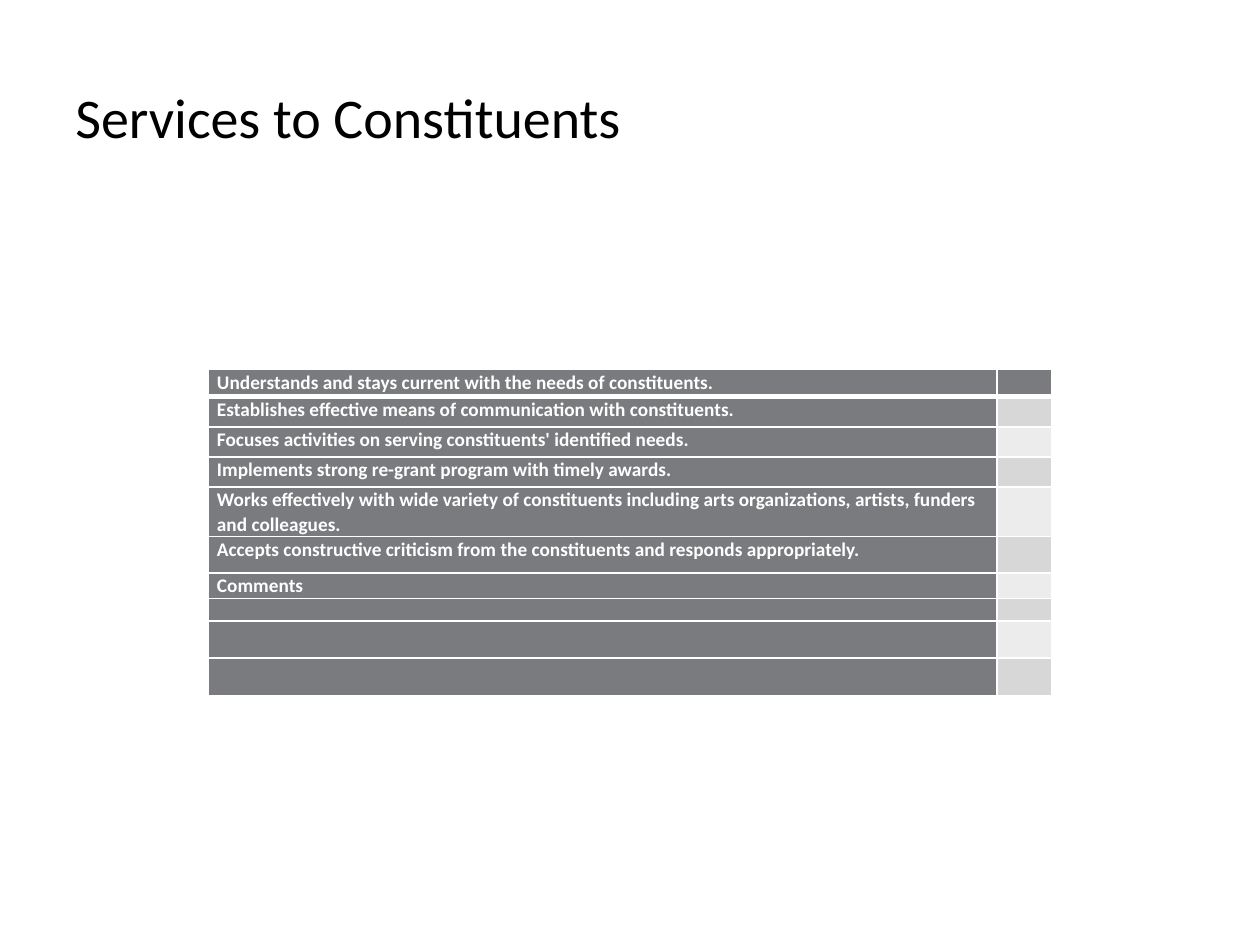
from lxml import etree
from pptx import Presentation
from pptx.dml.color import RGBColor
from pptx.enum.text import MSO_ANCHOR
from pptx.oxml.ns import qn
from pptx.util import Pt

TITLE = "Services to Constituents"
BULLET = "•"
# (statement, row height in points)
ROWS = [
    ("Understands and stays current with the needs of constituents.", 15.5),
    ("Establishes effective means of communication with constituents.", 17.2),
    ("Focuses activities on serving constituents' identified needs.", 17.2),
    ("Implements strong re-grant program with timely awards.", 17.2),
    ("Works effectively with wide variety of constituents including arts "
     "organizations, artists, funders and colleagues.", 28.3),
    ("Accepts constructive criticism from the constituents and responds "
     "appropriately.", 20.9),
    ("Comments", 14.5),
    ("", 12.9),
    (BULLET, 21.2),
    (BULLET, 21.4),
]
COLUMN_WIDTHS = (450.6, 31.6)
TABLE_LEFT, TABLE_TOP = 119, 211.2

THEME = {
    "font": "Calibri",
    "title_size": 32, "body_size": 11, "empty_size": 8,
    "title": "000000", "text": "FFFFFF", "border": "FFFFFF",
    "dark": "797B7E", "bands": ("ECECEC", "D7D7D8"),
    "thin": 1, "thick": 3,
}


def color(name):
    return RGBColor.from_string(THEME[name])


def style_font(font, size, color_name, bold=False):
    font.name = THEME["font"]
    font.size = Pt(THEME[size])
    font.bold = bold
    font.color.rgb = color(color_name)


def add_fill(parent, hex_color):
    fill = etree.SubElement(parent, qn("a:solidFill"))
    etree.SubElement(fill, qn("a:srgbClr"), val=hex_color)


def set_borders(cell, top, bottom):
    widths = {"lnL": THEME["thin"], "lnR": THEME["thin"], "lnT": top, "lnB": bottom}
    properties = cell._tc.get_or_add_tcPr()
    for position, (tag, width) in enumerate(widths.items()):
        line = etree.Element(qn(f"a:{tag}"), w=str(Pt(width)))
        add_fill(line, THEME["border"])
        properties.insert(position, line)


def format_empty_paragraph(paragraph, size, bullet=False):
    """Set the size and colour that an empty paragraph and its bullet take."""
    if bullet:
        properties = paragraph._p.get_or_add_pPr()
        etree.SubElement(properties, qn("a:buFont"), typeface="Arial")
        etree.SubElement(properties, qn("a:buChar"), char=BULLET)
    end = etree.SubElement(paragraph._p, qn("a:endParaRPr"), sz=str(THEME[size] * 100))
    add_fill(end, THEME["text"])
    etree.SubElement(end, qn("a:latin"), typeface=THEME["font"])


def fill_cell(cell, text):
    cell.margin_left = cell.margin_right = Pt(5)
    cell.margin_top = cell.margin_bottom = 0
    paragraph = cell.text_frame.paragraphs[0]
    if text in ("", BULLET):
        size = "body_size" if text else "empty_size"
        format_empty_paragraph(paragraph, size, bullet=bool(text))
        return
    paragraph.text = text
    paragraph.line_spacing = 1.05
    style_font(paragraph.font, "body_size", "text", bold=True)


def add_title(slide):
    box = slide.shapes.add_textbox(Pt(36), Pt(21.6), Pt(648), Pt(90))
    frame = box.text_frame
    frame.word_wrap = True
    frame.vertical_anchor = MSO_ANCHOR.MIDDLE
    paragraph = frame.paragraphs[0]
    paragraph.text = TITLE
    style_font(paragraph.font, "title_size", "title")


def add_rating_table(slide):
    height = sum(row_height for _, row_height in ROWS)
    table = slide.shapes.add_table(
        len(ROWS), len(COLUMN_WIDTHS), Pt(TABLE_LEFT), Pt(TABLE_TOP),
        Pt(sum(COLUMN_WIDTHS)), Pt(height)).table
    for column, width in zip(table.columns, COLUMN_WIDTHS):
        column.width = Pt(width)
    for index, (statement, row_height) in enumerate(ROWS):
        table.rows[index].height = Pt(row_height)
        band = THEME["bands"][index % 2] if index else THEME["dark"]
        top = THEME["thick"] if index == 1 else THEME["thin"]
        bottom = THEME["thick"] if index == 0 else THEME["thin"]
        for column, (text, fill) in enumerate(((statement, THEME["dark"]), ("", band))):
            cell = table.cell(index, column)
            fill_cell(cell, text)
            cell.fill.solid()
            cell.fill.fore_color.rgb = RGBColor.from_string(fill)
            set_borders(cell, top, bottom)


def main():
    presentation = Presentation()
    presentation.slide_width, presentation.slide_height = Pt(720), Pt(540)
    slide = presentation.slides.add_slide(presentation.slide_layouts[6])
    add_title(slide)
    add_rating_table(slide)
    presentation.save("out.pptx")


if __name__ == "__main__":
    main()
